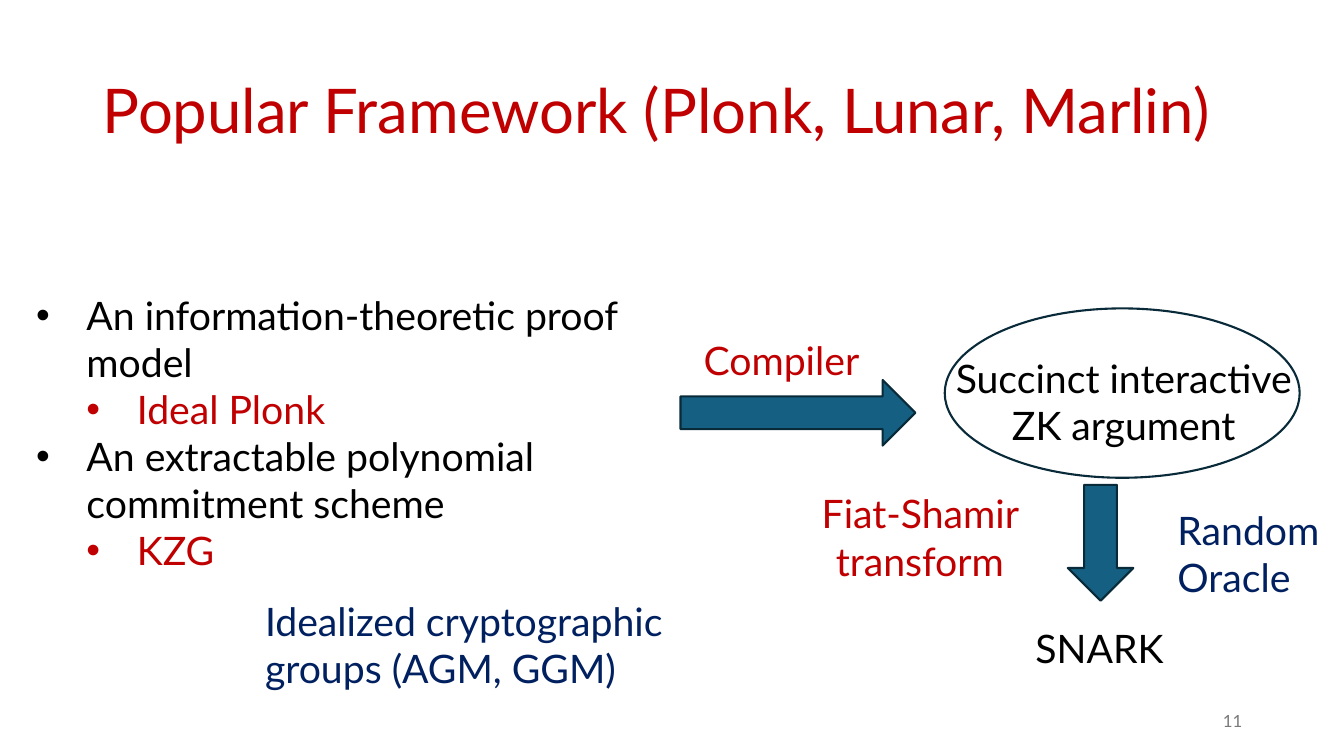
from pptx import Presentation
from pptx.dml.color import RGBColor
from pptx.enum.shapes import MSO_SHAPE
from pptx.enum.text import MSO_ANCHOR, PP_ALIGN
from pptx.oxml.ns import qn
from pptx.util import Inches, Pt
from lxml import etree

ARROW, OVAL = MSO_SHAPE.RIGHT_ARROW, MSO_SHAPE.OVAL
TOP, MIDDLE = MSO_ANCHOR.TOP, MSO_ANCHOR.MIDDLE
LEFT, CENTER, RIGHT = PP_ALIGN.LEFT, PP_ALIGN.CENTER, PP_ALIGN.RIGHT

COLS, ROWS = 13.33, 7.5
UNIT = Inches(1)
RED, NAVY, BLACK, GRAY = "C00000", "002060", "000000", "797979"
TEAL, EDGE = "156082", "092A39"
INDENT = 0.5
BODY = {"name": "Lato", "size": Pt(28)}


def rgb(value):
    return RGBColor.from_string(value)


def grid(*cells):
    return [round(c * UNIT) for c in cells]


def inside(box, dx, dy, w, h):
    return box[0] + dx, box[1] + dy, w, h


def add_bullet(p, level):
    pPr = p._p.get_or_add_pPr()
    pPr.set("marL", str(round((level + 1) * INDENT * UNIT)))
    pPr.set("indent", str(round(-INDENT * UNIT)))
    font = etree.SubElement(pPr, qn("a:buFont"))
    font.set("typeface", "Arial")
    etree.SubElement(pPr, qn("a:buChar")).set("char", "•")


def add_text(s, box, items, color=BLACK, align=LEFT, anchor=TOP, size=28, spacing=None):
    tf = s.shapes.add_textbox(*grid(*box)).text_frame
    tf.word_wrap = True
    tf.vertical_anchor = anchor
    if isinstance(items, str):
        items = [(items, None, color)]
    for i, (text, level, shade) in enumerate(items):
        p = tf.paragraphs[0] if i == 0 else tf.add_paragraph()
        p.alignment = align
        if spacing:
            p.line_spacing = spacing
        if level is not None:
            p.level = level
            add_bullet(p, level)
        r = p.add_run()
        r.text = text
        for key, value in {**BODY, "size": Pt(size)}.items():
            setattr(r.font, key, value)
        r.font.color.rgb = rgb(shade)


def add_outline(s, kind, box, fill=None, rotation=0):
    sp = s.shapes.add_shape(kind, *grid(*box))
    sp.shadow.inherit = False
    sp.rotation = rotation
    if fill:
        sp.fill.solid()
        sp.fill.fore_color.rgb = rgb(fill)
    else:
        sp.fill.background()
    sp.line.color.rgb = rgb(EDGE)
    sp.line.width = Pt(1.5)


def title(s, box, text):
    add_text(s, box, text, RED, anchor=MIDDLE, size=44, spacing=0.9)


def ingredients(s, box):
    add_text(s, inside(box, 0, 0, 6.97, 2.46), [
        ("An information-theoretic proof model", 0, BLACK),
        ("Ideal Plonk", 1, RED),
        ("An extractable polynomial commitment scheme", 0, BLACK),
        ("KZG", 1, RED),
    ])
    add_text(s, inside(box, 2.27, 3.04, 4.45, 1.04),
             "Idealized cryptographic groups (AGM, GGM)", NAVY)


def compiler(s, box):
    add_outline(s, ARROW, inside(box, 0, 0.48, box[2], 0.65), TEAL)
    add_text(s, inside(box, 0.13, 0, 1.98, 0.57), "Compiler", RED)


def argument(s, box):
    add_text(s, inside(box, 0, 0.41, 3.55, 1.04),
             "Succinct interactive ZK argument", align=CENTER)
    add_outline(s, OVAL, box)


def transform(s, box):
    add_outline(s, ARROW, inside(box, 2.38, 0.25, 1.15, 0.65), TEAL, 90)
    add_text(s, inside(box, 0, 0, 2.33, 1.04), "Fiat-Shamir transform", RED, CENTER)
    add_text(s, inside(box, 3.62, 0.16, 1.68, 1.04), "Random Oracle", NAVY)
    add_text(s, inside(box, 1.17, 1.33, 3.55, 0.57), "SNARK", align=CENTER)


def page_number(s, box, number):
    add_text(s, box, number, GRAY, RIGHT, MIDDLE, 12)


def main():
    prs = Presentation()
    prs.slide_width, prs.slide_height = grid(COLS, ROWS)
    s = prs.slides.add_slide(prs.slide_layouts[6])
    title(s, (0.92, 0.4, 11.5, 1.45), "Popular Framework (Plonk, Lunar, Marlin)")
    ingredients(s, (0.26, 2.84, 6.97, 4.08))
    compiler(s, (6.75, 3.29, 2.33, 1.13))
    argument(s, (9.37, 3.06, 3.52, 1.68))
    transform(s, (7.96, 4.81, 5.3, 1.9))
    page_number(s, (9.42, 6.95, 3, 0.4), "11")
    prs.save("out.pptx")


if __name__ == "__main__":
    main()
